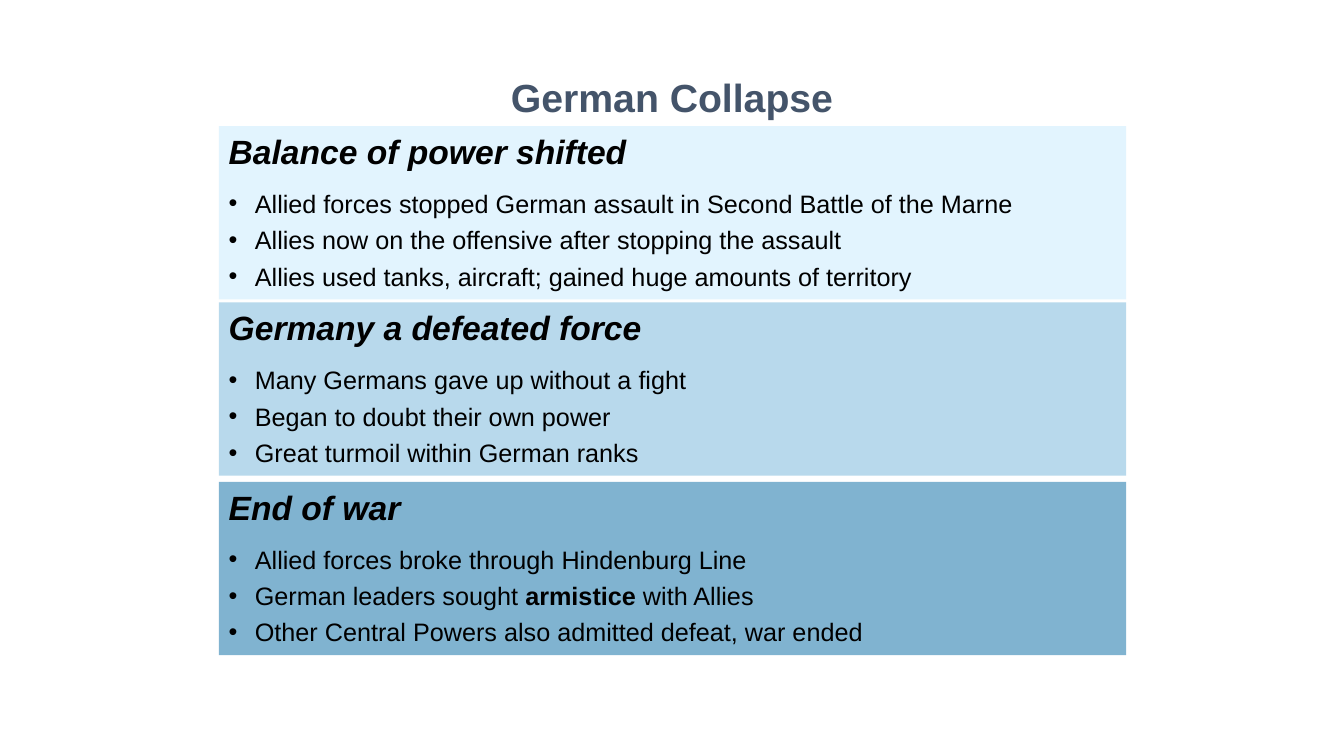
from dataclasses import dataclass

from lxml import etree
from pptx import Presentation
from pptx.dml.color import RGBColor
from pptx.enum.shapes import MSO_SHAPE
from pptx.enum.text import MSO_ANCHOR, PP_ALIGN
from pptx.oxml.ns import qn
from pptx.util import Inches, Pt

RECTANGLE = MSO_SHAPE.RECTANGLE
TOP, MIDDLE = MSO_ANCHOR.TOP, MSO_ANCHOR.MIDDLE
LEFT, CENTER = PP_ALIGN.LEFT, PP_ALIGN.CENTER


@dataclass(frozen=True)
class Theme:
    """Colours, type sizes and spacing of the slide."""
    font: str = "Arial"
    title_color: str = "44546A"
    text_color: str = "000000"
    title_size: int = 28
    heading_size: int = 24
    bullet_size: int = 18
    heading_gap: float = 12
    bullet_gap: float = 4.4
    indent: float = 0.26


class SlideBuilder:
    """Draws titles and bulleted panels on one slide."""

    def __init__(self, page, theme):
        self.page = page
        self.theme = theme

    def add_span(self, para, text, size, color, bold=False, italic=False):
        """Add one styled run to a paragraph."""
        span = para.add_run()
        span.text = text
        font = span.font
        font.name, font.size = self.theme.font, Pt(size)
        font.bold, font.italic = bold, italic
        font.color.rgb = RGBColor.from_string(color)

    def add_title(self, text, left, top, width, height):
        """Add the centred slide title."""
        box = self.page.shapes.add_textbox(
            Inches(left), Inches(top), Inches(width), Inches(height))
        frame = box.text_frame
        frame.word_wrap = True
        frame.vertical_anchor = MIDDLE
        para = frame.paragraphs[0]
        para.alignment = CENTER
        self.add_span(para, text, self.theme.title_size,
                      self.theme.title_color, bold=True)

    def add_bullet(self, frame, spans):
        """Add one bullet made of (text, bold) spans."""
        theme = self.theme
        para = frame.add_paragraph()
        para.alignment = LEFT
        para.space_after = Pt(theme.bullet_gap)
        properties = para._p.get_or_add_pPr()
        properties.set("marL", str(Inches(theme.indent)))
        properties.set("indent", str(-Inches(theme.indent)))
        etree.SubElement(properties, qn("a:buFont")).set("typeface", theme.font)
        etree.SubElement(properties, qn("a:buChar")).set("char", "•")
        for text, bold in spans:
            self.add_span(para, text, theme.bullet_size, theme.text_color, bold)

    def add_panel(self, heading, bullets, fill, left, top, width, height):
        """Add a filled panel with a heading and its bullets."""
        theme = self.theme
        box = self.page.shapes.add_shape(
            RECTANGLE, Inches(left), Inches(top), Inches(width), Inches(height))
        box.shadow.inherit = False
        box.fill.solid()
        box.fill.fore_color.rgb = RGBColor.from_string(fill)
        box.line.fill.background()
        frame = box.text_frame
        frame.word_wrap = True
        frame.vertical_anchor = TOP
        para = frame.paragraphs[0]
        para.alignment = LEFT
        para.space_after = Pt(theme.heading_gap)
        self.add_span(para, heading, theme.heading_size, theme.text_color,
                      bold=True, italic=True)
        for spans in bullets:
            self.add_bullet(frame, spans)


PANELS = [
    ("Balance of power shifted", "E2F4FE", 1.25, [
        [("Allied forces stopped German assault in Second Battle of the Marne", False)],
        [("Allies now on the offensive after stopping the assault", False)],
        [("Allies used tanks, aircraft; gained huge amounts of territory", False)],
    ]),
    ("Germany a defeated force", "B8D9EC", 3, [
        [("Many Germans gave up without a fight", False)],
        [("Began to doubt their own power", False)],
        [("Great turmoil within German ranks", False)],
    ]),
    ("End of war", "80B3D0", 4.78, [
        [("Allied forces broke through Hindenburg Line", False)],
        [("German leaders sought ", False), ("armistice", True), (" with Allies", False)],
        [("Other Central Powers also admitted defeat, war ended", False)],
    ]),
]


def main():
    """Build the slide and save it."""
    deck = Presentation()
    deck.slide_width, deck.slide_height = Inches(13.33), Inches(7.5)
    page = deck.slides.add_slide(deck.slide_layouts[6])
    builder = SlideBuilder(page, Theme())
    for heading, fill, top, bullets in PANELS:
        builder.add_panel(heading, bullets, fill, 2.17, top, 9, 1.72)
    builder.add_title("German Collapse", 2.33, 0.67, 8.67, 0.58)
    deck.save("out.pptx")


if __name__ == "__main__":
    main()
